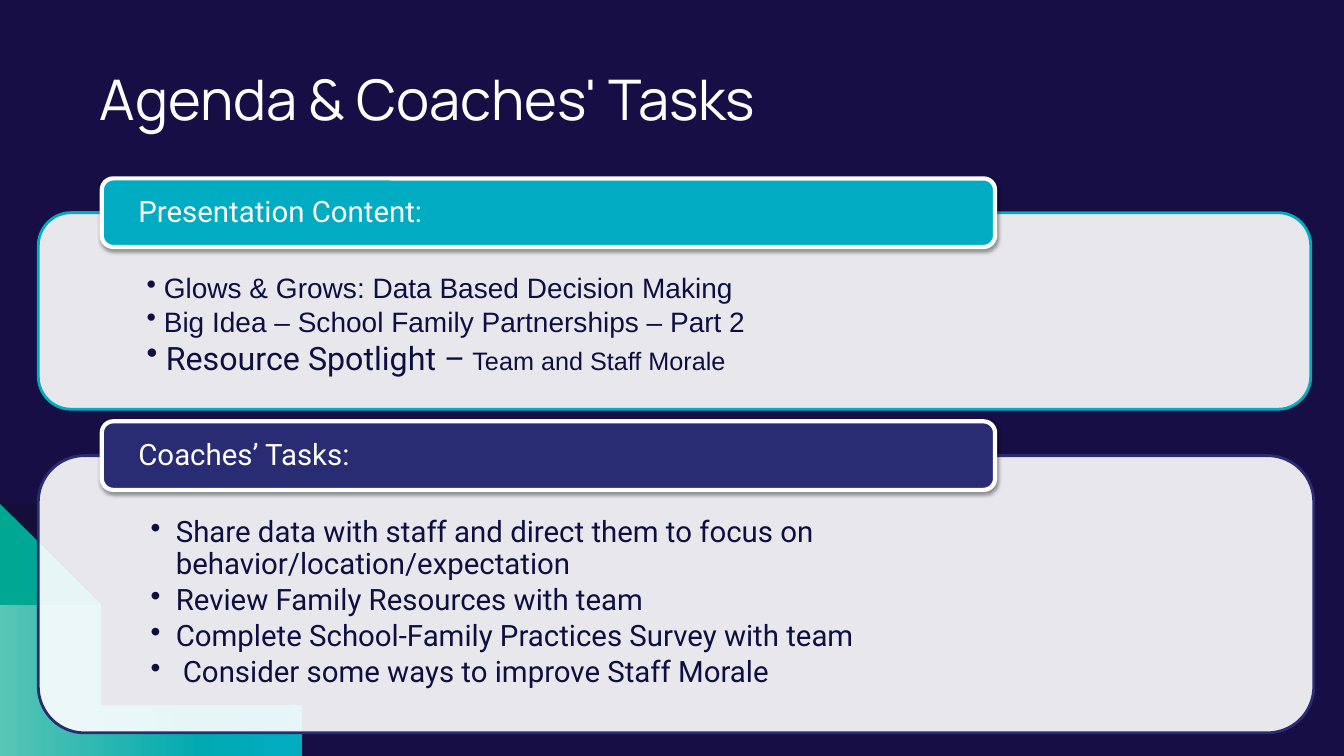
from lxml import etree
from pptx import Presentation
from pptx import util as u
from pptx.dml.color import RGBColor
from pptx.enum import shapes, text
from pptx.oxml import ns

NIGHT, INK, WHITE = "160E44", "0D0F41", "FFFFFF"
TEAL, GREEN, INDIGO, SHADE = "00ACC2", "00A791", "292C73", "12102F"
BODY_INSETS = (0.98, 0.48, 0.98, 0.16)
HEADER_INSETS = (0.33, 0, 0.33, 0)
CURVE_STEPS = 40


def rgb(hex_color):
    return RGBColor.from_string(hex_color)


def add_child(parent, tag, **attributes):
    child = etree.SubElement(parent, ns.qn(tag))
    for name, value in attributes.items():
        child.set(name, str(value))
    return child


def set_alpha(shape, *percents):
    """Give the fill colours of a shape their opacities, in order."""
    colors = shape.element.spPr.iter(ns.qn("a:srgbClr"))
    for color, percent in zip(colors, percents):
        add_child(color, "a:alpha", val=percent * 1000)


def bezier(*controls):
    """Return points along a cubic curve."""
    points = []
    for step in range(CURVE_STEPS + 1):
        t = step / CURVE_STEPS
        weights = ((1 - t) ** 3, 3 * t * (1 - t) ** 2, 3 * t * t * (1 - t), t ** 3)
        points.append(tuple(sum(w * c[axis] for w, c in zip(weights, controls))
                            for axis in (0, 1)))
    return points


class AgendaSlide:
    def __init__(self, deck):
        self.page = deck.slides.add_slide(deck.slide_layouts[5])
        self.page.background.fill.solid()
        self.page.background.fill.fore_color.rgb = rgb(NIGHT)

    def frame(self, shape, insets, anchor):
        frame = shape.text_frame
        frame.word_wrap = True
        frame.auto_size = text.MSO_AUTO_SIZE.NONE
        frame.vertical_anchor = anchor
        (frame.margin_left, frame.margin_top,
         frame.margin_right, frame.margin_bottom) = map(u.Inches, insets)
        return frame

    def style(self, font, size, name, color):
        font.size, font.name = u.Pt(size), name
        font.color.rgb = rgb(color)

    def fill_para(self, para, words, size, name, color):
        para.text = words
        para.alignment = text.PP_ALIGN.LEFT
        self.style(para.font, size, name, color)

    def title(self, words, *box):
        title = self.page.shapes.title
        title.left, title.top, title.width, title.height = map(u.Inches, box)
        frame = self.frame(title, (0.1,) * 4, text.MSO_ANCHOR.MIDDLE)
        self.fill_para(frame.paragraphs[0], words, 40, "Manrope", WHITE)

    def swoosh(self, controls, colors, alphas):
        """Fill the lower left corner below a curve."""
        points = bezier(*controls) + [(0, 7.5)]
        builder = self.page.shapes.build_freeform(*points[0], scale=u.Inches(1))
        builder.add_line_segments(points[1:], close=True)
        shape = builder.convert_to_shape()
        shape.shadow.inherit = False
        shape.line.fill.background()
        if len(colors) == 1:
            shape.fill.solid()
            shape.fill.fore_color.rgb = rgb(colors[0])
        else:
            shape.fill.gradient()
            shape.fill.gradient_angle = 0
            for stop, color in zip(shape.fill.gradient_stops, colors):
                stop.color.rgb = rgb(color)
        set_alpha(shape, *alphas)

    def rounded(self, box, fill, line, width):
        shape = self.page.shapes.add_shape(
            shapes.MSO_SHAPE.ROUNDED_RECTANGLE, *map(u.Inches, box))
        shape.shadow.inherit = False
        shape.fill.solid()
        shape.fill.fore_color.rgb = rgb(fill)
        shape.line.color.rgb = rgb(line)
        shape.line.width = u.Pt(width)
        return shape

    def panel(self, box, accent):
        shape = self.rounded(box, WHITE, accent, 2)
        set_alpha(shape, 90)
        return self.frame(shape, BODY_INSETS, text.MSO_ANCHOR.TOP)

    def header(self, top, words, accent):
        shape = self.rounded((1.01, top, 8.86, 0.68), accent, WHITE, 3)
        effects = shape.element.spPr.find(ns.qn("a:effectLst"))
        shadow = add_child(effects, "a:outerShdw", blurRad=u.Pt(3.1), dist=u.Pt(1.6),
                           dir=90 * 60000, algn="ctr", rotWithShape=0)
        add_child(add_child(shadow, "a:srgbClr", val="000000"), "a:alpha", val=38000)
        frame = self.frame(shape, HEADER_INSETS, text.MSO_ANCHOR.MIDDLE)
        para = frame.paragraphs[0]
        self.fill_para(para, words, 21, "Roboto", WHITE)
        para.line_spacing = 0.9
        para.space_after = u.Pt(7)

    def bullet(self, frame, words, size, name, indent):
        para = frame.add_paragraph() if frame.text else frame.paragraphs[0]
        self.fill_para(para, words, size, name, INK)
        properties = para._p.get_or_add_pPr()
        properties.set("marL", str(u.Inches(indent)))
        properties.set("indent", str(-u.Inches(indent)))
        mark = etree.Element(ns.qn("a:buChar"), char="•")
        properties.find(ns.qn("a:defRPr")).addprevious(mark)
        return para


def main():
    deck = Presentation()
    deck.slide_width, deck.slide_height = u.Inches(13.33), u.Inches(7.5)
    agenda = AgendaSlide(deck)

    agenda.swoosh([(0, 4.13), (0.98, 7.39), (3.03, 7.5), (3.03, 7.5)], [SHADE], [54])
    agenda.swoosh([(0, 4.22), (0.95, 7.39), (2.95, 7.5), (2.95, 7.5)],
                  [GREEN, TEAL], [100, 100])
    agenda.swoosh([(0, 5.06), (0, 5.06), (0.91, 7.35), (2.16, 7.5)],
                  [WHITE, WHITE], [36, 0])
    agenda.title("Agenda & Coaches' Tasks", 0.89, 0.51, 10.26, 0.92)

    content = agenda.panel((0.38, 2.11, 12.62, 1.95), TEAL)
    for topic in ("Glows & Grows: Data Based Decision Making",
                  "Big Idea – School Family Partnerships – Part 2"):
        agenda.bullet(content, topic, 20, "Arial", 0.17)
    spotlight = agenda.bullet(content, "Resource Spotlight –", 23, "Roboto", 0.19)
    span = spotlight.add_run()
    span.text = " Team and Staff Morale"
    agenda.style(span.font, 18, "Arial", INK)
    agenda.header(1.77, "Presentation Content:", TEAL)

    tasks = agenda.panel((0.38, 4.52, 12.65, 2.75), INDIGO)
    for task, indent in (
            ("Share data with staff and direct them to focus on "
             "behavior/location/expectation", 0.25),
            ("Review Family Resources with team", 0.25),
            ("Complete School-Family Practices Survey with team", 0.25),
            ("Consider some ways to improve Staff Morale", 0.32)):
        para = agenda.bullet(tasks, task, 21, "Roboto", indent)
        para.line_spacing = 0.9
        para.space_after = u.Pt(3)
    agenda.header(4.18, "Coaches’ Tasks:", INDIGO)

    deck.save("out.pptx")


if __name__ == "__main__":
    main()
